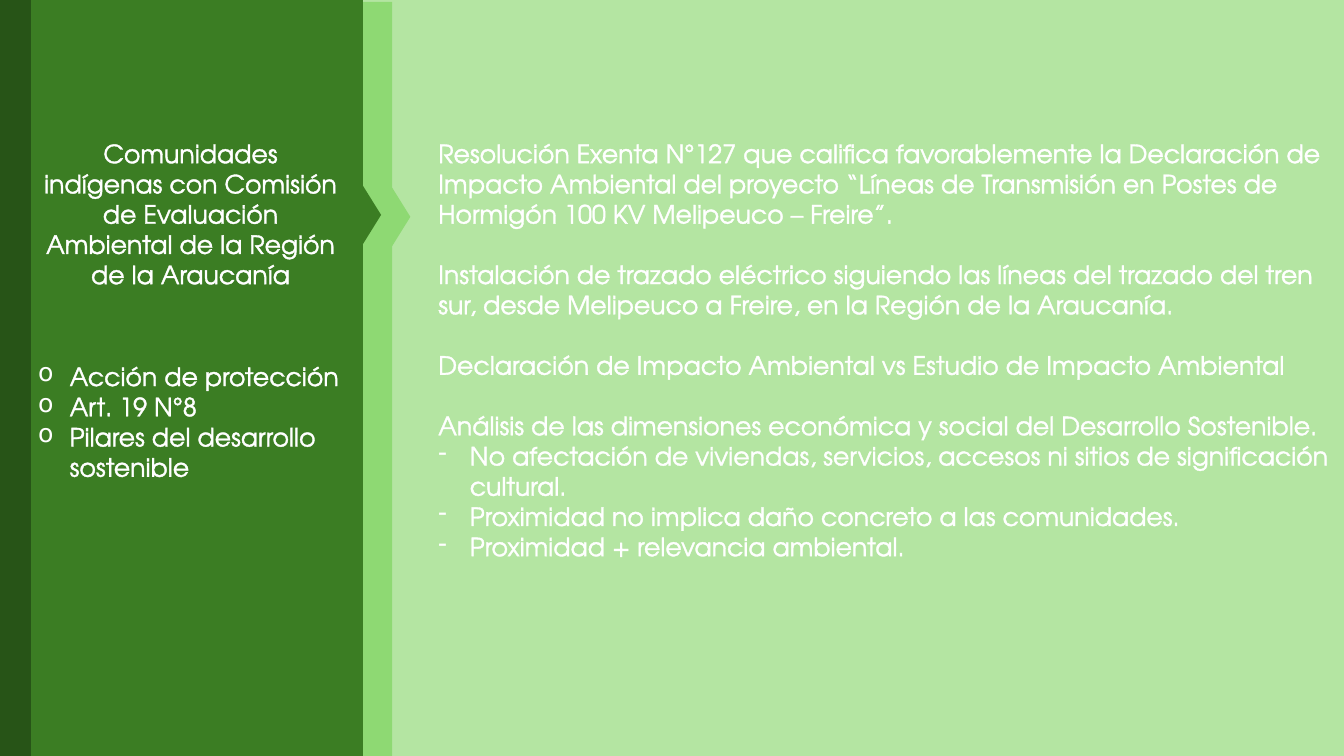
import dataclasses
import typing

import pptx
import pptx.dml.color
import pptx.enum.shapes
import pptx.enum.text
import pptx.oxml
import pptx.oxml.ns
import pptx.util

Pt = pptx.util.Pt
FONT = "TeX Gyre Adventor"
TEXT_SIZE = 18
LINE_HEIGHT = 21.6
BULLET_INDENT = 22.5
PAGE_WIDTH, PAGE_HEIGHT = 960, 540
BAND_WIDTH = 236.9
TIP_BASE, TIP_LENGTH, TIP_TOP = 41.8, 13, 147
TEXT_TOP = 95
COLOURS = {
    "background": "B4E5A2",
    "light": "8ED973",
    "medium": "3B7D23",
    "dark": "275417",
    "text": "FFFFFF",
}


@dataclasses.dataclass
class Band:
    left: float
    top: float
    colour: str
    has_tip: bool


@dataclasses.dataclass
class Line:
    text: str
    bullet: str = ""
    gap_before: float = 0


@dataclasses.dataclass
class TextBlock:
    left: float
    top: float
    width: float
    height: float
    lines: list[Line]


BANDS = [
    Band(43.2, 1.4, "light", True),
    Band(0, 0, "dark", False),
    Band(22.3, 0, "medium", True),
]
HEADING = TextBlock(23.8, TEXT_TOP, 224.6, 116.6, [
    Line("Comunidades indígenas con Comisión de Evaluación Ambiental "
         "de la Región de la Araucanía"),
])
BLOCKS = [
    TextBlock(306, TEXT_TOP, 653, 312.5, [
        Line("Resolución Exenta N°127 que califica favorablemente la Declaración de "
             "Impacto Ambiental del proyecto “Líneas de Transmisión en Postes de "
             "Hormigón 100 KV Melipeuco – Freire”."),
        Line("Instalación de trazado eléctrico siguiendo las líneas del trazado del "
             "tren sur, desde Melipeuco a Freire, en la Región de la Araucanía.",
             gap_before=LINE_HEIGHT),
        Line("Declaración de Impacto Ambiental vs Estudio de Impacto Ambiental",
             gap_before=LINE_HEIGHT),
        Line("Análisis de las dimensiones económica y social del Desarrollo Sostenible.",
             gap_before=LINE_HEIGHT),
        Line("No afectación de viviendas, servicios, accesos ni sitios de "
             "significación cultural.", "-"),
        Line("Proximidad no implica daño concreto a las comunidades.", "-"),
        Line("Proximidad + relevancia ambiental.", "-"),
    ]),
    TextBlock(20.2, 254.2, 247.7, 94.3, [
        Line("Acción de protección", "o"),
        Line("Art. 19 N°8", "o"),
        Line("Pilares del desarrollo sostenible", "o"),
    ]),
]


def colour(name: str) -> pptx.dml.color.RGBColor:
    return pptx.dml.color.RGBColor.from_string(COLOURS[name])


def paint(shape: typing.Any, name: str) -> None:
    shape.shadow.inherit = False
    shape.fill.solid()
    shape.fill.fore_color.rgb = colour(name)
    shape.line.fill.background()


def draw_band(page: typing.Any, band: Band) -> None:
    kinds = pptx.enum.shapes.MSO_SHAPE
    group = page.shapes.add_group_shape()
    strip = group.shapes.add_shape(
        kinds.RECTANGLE, Pt(band.left), Pt(band.top),
        Pt(BAND_WIDTH), Pt(PAGE_HEIGHT - band.top))
    paint(strip, band.colour)
    if band.has_tip:
        # The frame is placed so that the turned base meets the band's edge
        tip_left = band.left + BAND_WIDTH + (TIP_LENGTH - TIP_BASE) / 2
        tip = group.shapes.add_shape(
            kinds.ISOSCELES_TRIANGLE, Pt(tip_left), Pt(band.top + TIP_TOP),
            Pt(TIP_BASE), Pt(TIP_LENGTH))
        tip.rotation = 90
        paint(tip, band.colour)


def add_outline(span: typing.Any) -> None:
    outline = pptx.oxml.parse_xml(
        f'<a:ln {pptx.oxml.ns.nsdecls("a")} w="{Pt(1)}"><a:solidFill>'
        f'<a:srgbClr val="{COLOURS["text"]}"/></a:solidFill></a:ln>')
    span.font._element.insert(0, outline)


def add_bullet(para: typing.Any, mark: str) -> None:
    properties = para._p.get_or_add_pPr()
    properties.set("marL", str(Pt(BULLET_INDENT)))
    properties.set("indent", str(-Pt(BULLET_INDENT)))
    properties.append(pptx.oxml.parse_xml(
        f'<a:buChar {pptx.oxml.ns.nsdecls("a")} char="{mark}"/>'))


def write_lines(box: typing.Any, block: TextBlock) -> None:
    frame = box.text_frame
    frame.word_wrap = True
    frame.auto_size = pptx.enum.text.MSO_AUTO_SIZE.SHAPE_TO_FIT_TEXT
    frame.vertical_anchor = pptx.enum.text.MSO_ANCHOR.TOP
    for number, line in enumerate(block.lines):
        para = frame.add_paragraph() if number else frame.paragraphs[0]
        para.line_spacing = 1.0
        para.space_before = Pt(line.gap_before)
        if line.bullet:
            add_bullet(para, line.bullet)
        span = para.add_run()
        span.text = line.text
        span.font.name = FONT
        span.font.size = Pt(TEXT_SIZE)
        span.font.color.rgb = colour("text")
        add_outline(span)


def place_heading(page: typing.Any, block: TextBlock) -> None:
    title = page.shapes.title
    title.left, title.top = Pt(block.left), Pt(block.top)
    title.width, title.height = Pt(block.width), Pt(block.height)
    title.fill.solid()
    title.fill.fore_color.rgb = colour("medium")
    write_lines(title, block)
    title.text_frame.paragraphs[0].alignment = pptx.enum.text.PP_ALIGN.CENTER
    # Bring the heading in front of the bands
    tree = title.element.getparent()
    tree.append(title.element)


def main() -> None:
    deck = pptx.Presentation()
    deck.slide_width, deck.slide_height = Pt(PAGE_WIDTH), Pt(PAGE_HEIGHT)
    page = deck.slides.add_slide(deck.slide_layouts.get_by_name("Title Only"))
    page.background.fill.solid()
    page.background.fill.fore_color.rgb = colour("background")

    # Layered bands on the left
    for band in BANDS:
        draw_band(page, band)

    # Heading, explanation and key points
    place_heading(page, HEADING)
    for block in BLOCKS:
        box = page.shapes.add_textbox(
            Pt(block.left), Pt(block.top), Pt(block.width), Pt(block.height))
        write_lines(box, block)

    deck.save("out.pptx")


if __name__ == "__main__":
    main()
